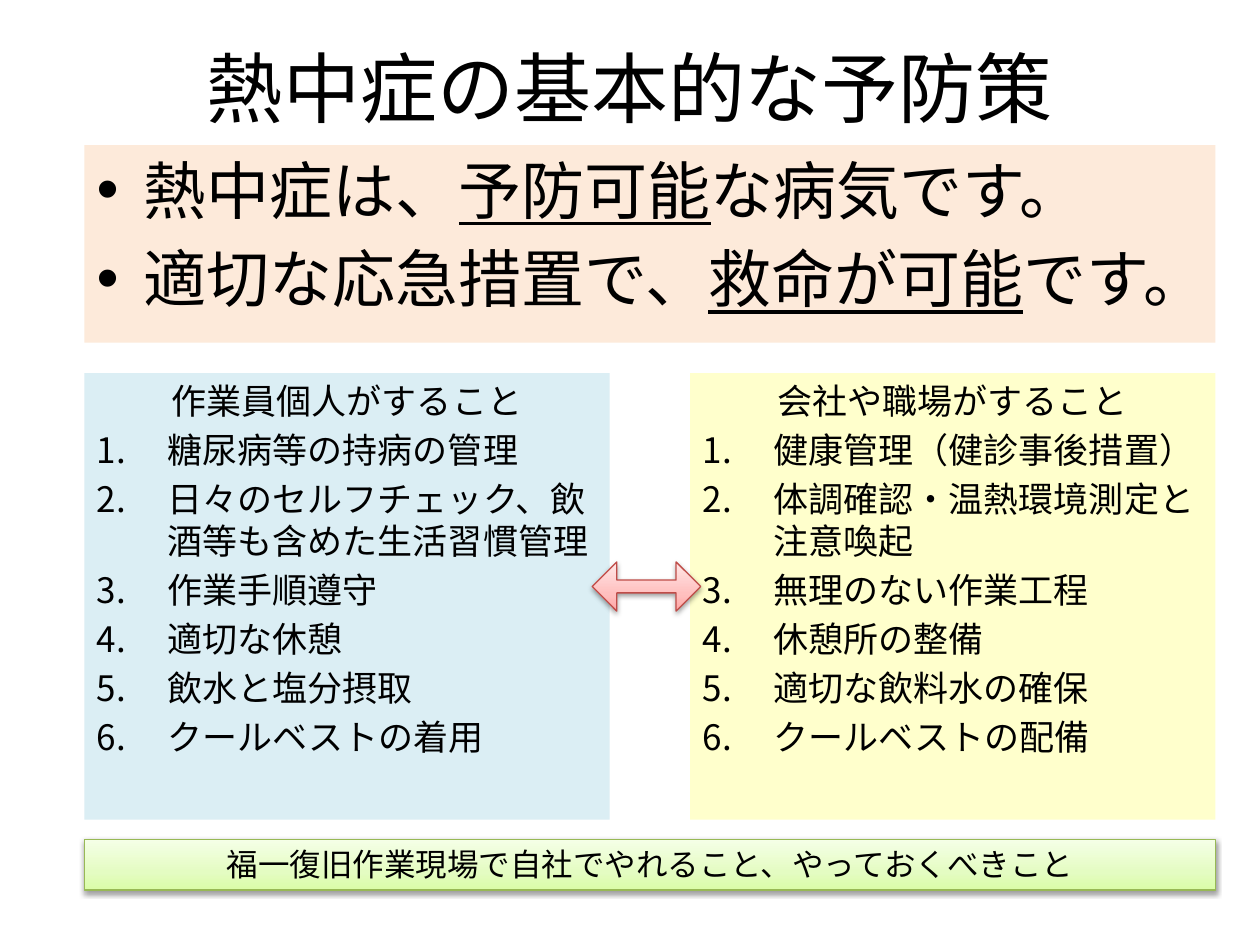
from dataclasses import dataclass

from lxml import etree
from pptx import Presentation
from pptx import util as u
from pptx.dml.color import RGBColor
from pptx.enum import shapes, text
from pptx.oxml.ns import qn


@dataclass(frozen=True)
class Theme:
    ink: str = "000000"
    peach: str = "FDEADA"
    blue: str = "DBEEF4"
    yellow: str = "FFFFCC"
    red_line: str = "BF4C48"
    green_line: str = "98B955"
    reds: tuple = ("FFA6A5", "FFC0BF", "FFE7E7")
    greens: tuple = ("DAFDA7", "E4FCC2", "F5FFE7")
    latin: str = "Calibri"
    list_font: str = "Arial"
    title: int = 44
    lead: int = 36
    item: int = 20
    footer: int = 18


def sub(parent, tag, **attrs):
    return etree.SubElement(parent, qn(tag), {k: str(v) for k, v in attrs.items()})


class Deck:
    """Draws styled elements on the current slide, measured in points."""

    def __init__(self, theme):
        self.t = theme
        self.prs = Presentation()
        self.prs.slide_width, self.prs.slide_height = u.Pt(720), u.Pt(540)
        self.s = self.prs.slides.add_slide(self.prs.slide_layouts[6])

    def style(self, p, size, font):
        for r in p.runs:
            r.font.size, r.font.name = u.Pt(size), font
            r.font.color.rgb = RGBColor.from_string(self.t.ink)

    def indent(self, p, hang, bullet=None):
        pPr = p._p.get_or_add_pPr()
        pPr.set("marL", str(u.Pt(hang)))
        pPr.set("indent", str(-u.Pt(hang)))
        sub(sub(pPr, "a:spcBef"), "a:spcPct", val=20000)
        if bullet == "1.":
            sub(pPr, "a:buFont", typeface="+mj-lt")
            sub(pPr, "a:buAutoNum", type="arabicPeriod")
        elif bullet:
            sub(pPr, "a:buFont", typeface=self.t.list_font)
            sub(pPr, "a:buChar", char=bullet)
        else:
            sub(pPr, "a:buNone")

    def title(self, box, words):
        sp = self.s.shapes.add_textbox(*map(u.Pt, box))
        tf = sp.text_frame
        tf.word_wrap = True
        tf.vertical_anchor = text.MSO_ANCHOR.MIDDLE
        tf.text = words
        p = tf.paragraphs[0]
        p.alignment = text.PP_ALIGN.CENTER
        self.style(p, self.t.title, self.t.latin)

    def panel(self, box, fill):
        sp = self.s.shapes.add_shape(shapes.MSO_SHAPE.RECTANGLE, *map(u.Pt, box))
        sp.fill.solid()
        sp.fill.fore_color.rgb = RGBColor.from_string(fill)
        sp.line.fill.background()
        sp.shadow.inherit = False
        sp.text_frame.vertical_anchor = text.MSO_ANCHOR.TOP
        return sp.text_frame

    def lead(self, box, fill, lines):
        tf = self.panel(box, fill)
        tf.text = "\n".join(before for before, _, _ in lines)
        for p, (_, key, after) in zip(tf.paragraphs, lines):
            p.alignment = text.PP_ALIGN.LEFT
            self.indent(p, 27, "•")
            for words in (key, after):
                r = p.add_run()
                r.text = words
                r.font.underline = words == key
            self.style(p, self.t.lead, self.t.latin)

    def checklist(self, box, fill, heading, font, items):
        tf = self.panel(box, fill)
        tf.text = "\n".join([heading, *items])
        head, *rest = tf.paragraphs
        head.alignment = text.PP_ALIGN.CENTER
        self.indent(head, 27)
        self.style(head, self.t.item, font)
        for p in rest:
            p.alignment = text.PP_ALIGN.LEFT
            self.indent(p, 40.5, "1.")
            self.style(p, self.t.item, self.t.list_font)

    def glossy(self, kind, box, colors, line):
        sp = self.s.shapes.add_shape(kind, *map(u.Pt, box))
        sp.fill.gradient()
        sp.fill.gradient_angle = 90
        spPr = sp._element.spPr
        stops = spPr.find(qn("a:gradFill")).find(qn("a:gsLst"))
        for old in list(stops):
            stops.remove(old)
        for pos, color in zip((0, 35000, 100000), colors):
            sub(sub(stops, "a:gs", pos=pos), "a:srgbClr", val=color)
        sp.line.color.rgb = RGBColor.from_string(line)
        sp.line.width = u.Pt(0.75)
        sp.shadow.inherit = False
        shadow = sub(spPr.find(qn("a:effectLst")), "a:outerShdw", blurRad=u.Pt(3.1),
                     dist=u.Pt(1.6), dir=5400000, rotWithShape=0)
        sub(sub(shadow, "a:srgbClr", val=self.t.ink), "a:alpha", val=38000)
        return sp

    def arrow(self, box):
        sp = self.glossy(shapes.MSO_SHAPE.LEFT_RIGHT_ARROW, box, self.t.reds, self.t.red_line)
        sp.adjustments[0], sp.adjustments[1] = 0.26, 0.5

    def footer(self, box, words):
        sp = self.glossy(shapes.MSO_SHAPE.RECTANGLE, box, self.t.greens, self.t.green_line)
        tf = sp.text_frame
        tf.vertical_anchor = text.MSO_ANCHOR.TOP
        tf.text = words
        p = tf.paragraphs[0]
        p.alignment = text.PP_ALIGN.CENTER
        self.style(p, self.t.footer, self.t.latin)


def main():
    t = Theme()
    d = Deck(t)
    left, width, col, top, height = 48.2, 646.4, 300.2, 213.2, 255.2
    d.title((36, 21.6, 648, 55.4), "熱中症の基本的な予防策")
    d.lead((left, 82.9, width, 113), t.peach, [
        ("熱中症は、", "予防可能", "な病気です。"),
        ("適切な応急措置で、", "救命が可能", "です。"),
    ])
    d.checklist((left, top, col, height), t.blue, "作業員個人がすること", t.latin, [
        "糖尿病等の持病の管理",
        "日々のセルフチェック、飲酒等も含めた生活習慣管理",
        "作業手順遵守",
        "適切な休憩",
        "飲水と塩分摂取",
        "クールベストの着用",
    ])
    d.checklist((left + width - col, top, col, height), t.yellow, "会社や職場がすること", t.list_font, [
        "健康管理（健診事後措置）",
        "体調確認・温熱環境測定と注意喚起",
        "無理のない作業工程",
        "休憩所の整備",
        "適切な飲料水の確保",
        "クールベストの配備",
    ])
    d.arrow((338.4, 321.1, 62, 28.1))
    d.footer((left, 479.6, width, 29), "福一復旧作業現場で自社でやれること、やっておくべきこと")
    d.prs.save("out.pptx")


if __name__ == "__main__":
    main()
